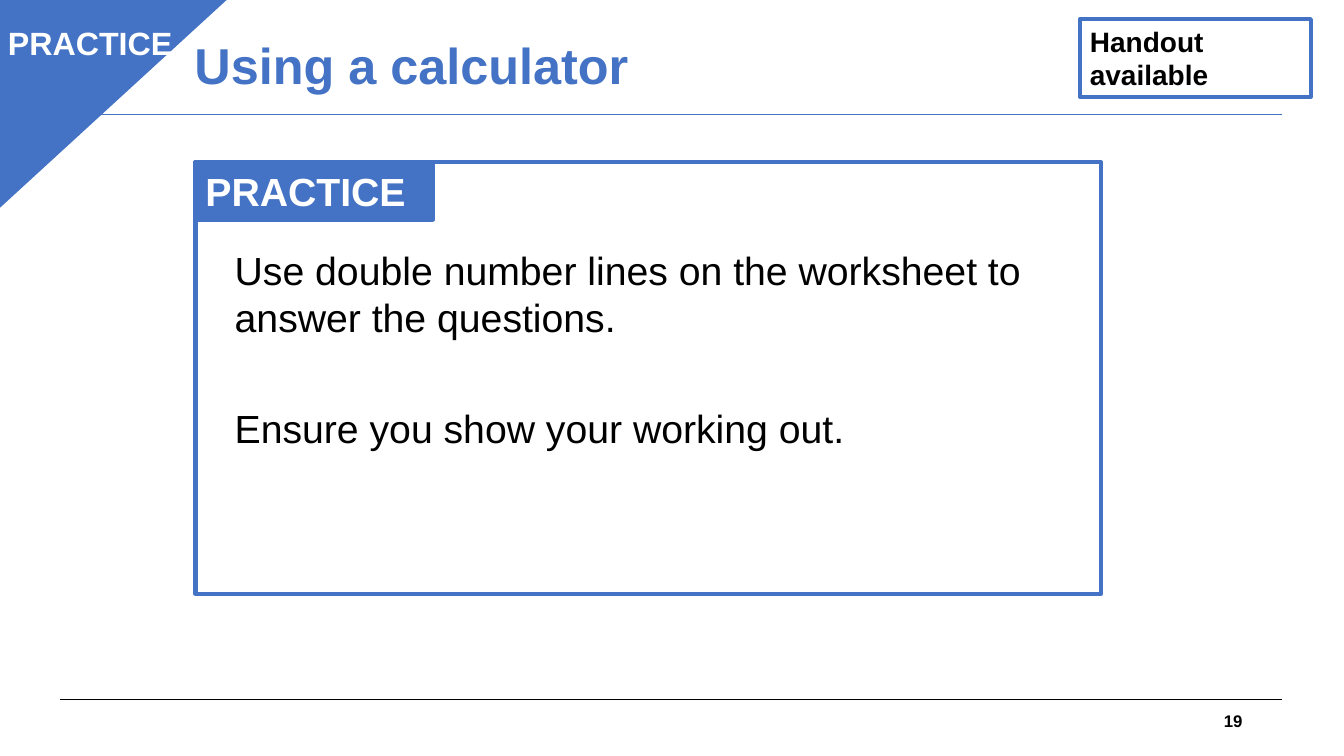
from pptx import Presentation
from pptx.dml.color import RGBColor
from pptx.enum.shapes import MSO_CONNECTOR as Connector, MSO_SHAPE as Shape
from pptx.enum.text import MSO_ANCHOR as Anchor, PP_ALIGN as Align
from pptx.oxml.ns import qn
from pptx.util import Inches, Pt
from lxml.etree import SubElement

BLUE = RGBColor(0x44, 0x72, 0xC4)
BLACK = RGBColor(0, 0, 0)
WHITE = RGBColor(255, 255, 255)
FONT = "Arial"
WIDTH, HEIGHT = Inches(13.33), Inches(7.5)


# Positions are percentages of the slide's width and height
def across(percent):
    return round(WIDTH * percent / 100)


def down(percent):
    return round(HEIGHT * percent / 100)


def place(left, top, width, height):
    return across(left), down(top), across(width), down(height)


def add_rule(slide, level, color):
    """Draw a thin horizontal line between the slide's margins."""
    rule = slide.shapes.add_connector(
        Connector.STRAIGHT, across(4.43), down(level), across(95.42), down(level))
    rule.line.color.rgb = color
    rule.line.width = Pt(0.75)
    SubElement(rule._element.spPr, qn("a:effectLst"))


def add_corner(slide):
    """Fill the top left corner with a right triangle."""
    left, top, right, bottom = place(-0.23, -0.27, 16.95, 27.73)
    builder = slide.shapes.build_freeform(left, top)
    builder.add_line_segments([(right, top), (left, bottom)])
    corner = builder.convert_to_shape()
    corner.shadow.inherit = False
    corner.fill.solid()
    corner.fill.fore_color.rgb = BLUE
    corner.line.color.rgb = BLUE
    corner.line.width = Pt(1)


def add_box(slide, area, fill=None):
    """Add a rectangle with a heavy blue border."""
    box = slide.shapes.add_shape(Shape.RECTANGLE, *place(*area))
    box.shadow.inherit = False
    if fill is None:
        box.fill.background()
    else:
        box.fill.solid()
        box.fill.fore_color.rgb = fill
    box.line.color.rgb = BLUE
    box.line.width = Pt(3)
    return box


def add_run(paragraph, text, size, color, bold):
    run = paragraph.add_run()
    run.text = text
    run.font.name = FONT
    run.font.size = Pt(size)
    run.font.bold = bold
    run.font.color.rgb = color


def write(shape, lines, size, color, bold=True, align=Align.LEFT, anchor=Anchor.TOP):
    """Write lines as one paragraph and return it."""
    frame = shape.text_frame
    frame.word_wrap = True
    frame.vertical_anchor = anchor
    paragraph = frame.paragraphs[0]
    paragraph.alignment = align
    for index, line in enumerate(lines):
        if index:
            paragraph.add_line_break()
        add_run(paragraph, line, size, color, bold)
    return paragraph


def add_text(slide, area, text, size, color, **style):
    box = slide.shapes.add_textbox(*place(*area))
    return write(box, [text], size, color, **style)


def add_instructions(slide, area, texts):
    """Add body paragraphs with a wide gap between them."""
    frame = slide.shapes.add_textbox(*place(*area)).text_frame
    frame.word_wrap = True
    for index, text in enumerate(texts):
        paragraph = frame.add_paragraph() if index else frame.paragraphs[0]
        paragraph.space_after = Pt(6)
        if index:
            paragraph.space_before = Pt(40)
        add_run(paragraph, text, 28, BLACK, False)


def main():
    presentation = Presentation()
    presentation.slide_width, presentation.slide_height = WIDTH, HEIGHT
    slide = presentation.slides.add_slide(presentation.slide_layouts[6])

    # Footer and header
    add_rule(slide, 92.53, BLACK)
    add_rule(slide, 15.2, BLUE)
    add_text(slide, (70.67, 92.67, 22.51, 5.33), "19", 12, BLACK,
             align=Align.RIGHT, anchor=Anchor.MIDDLE)
    title = add_text(slide, (13.73, 1.6, 65.19, 14.8), "Using a calculator", 36, BLUE,
                     anchor=Anchor.MIDDLE)
    title.line_spacing = 0.9

    # Corner label
    add_corner(slide)
    add_text(slide, (-0.15, 2.4, 15.3, 6.67), "PRACTICE", 23, WHITE)

    # Practice panel
    banner = add_box(slide, (14.55, 21.47, 17.63, 7.6), BLUE)
    write(banner, ["PRACTICE"], 28, WHITE)
    add_box(slide, (14.55, 21.47, 67.37, 57.07))
    add_instructions(slide, (16.73, 31.87, 61.97, 35.6), [
        "Use double number lines on the worksheet to answer the questions.",
        "Ensure you show your working out.",
    ])

    # Handout note
    handout = add_box(slide, (80.35, 2.53, 17.18, 10.27))
    write(handout, ["Handout", "available"], 20, BLACK)

    presentation.save("out.pptx")


if __name__ == "__main__":
    main()
